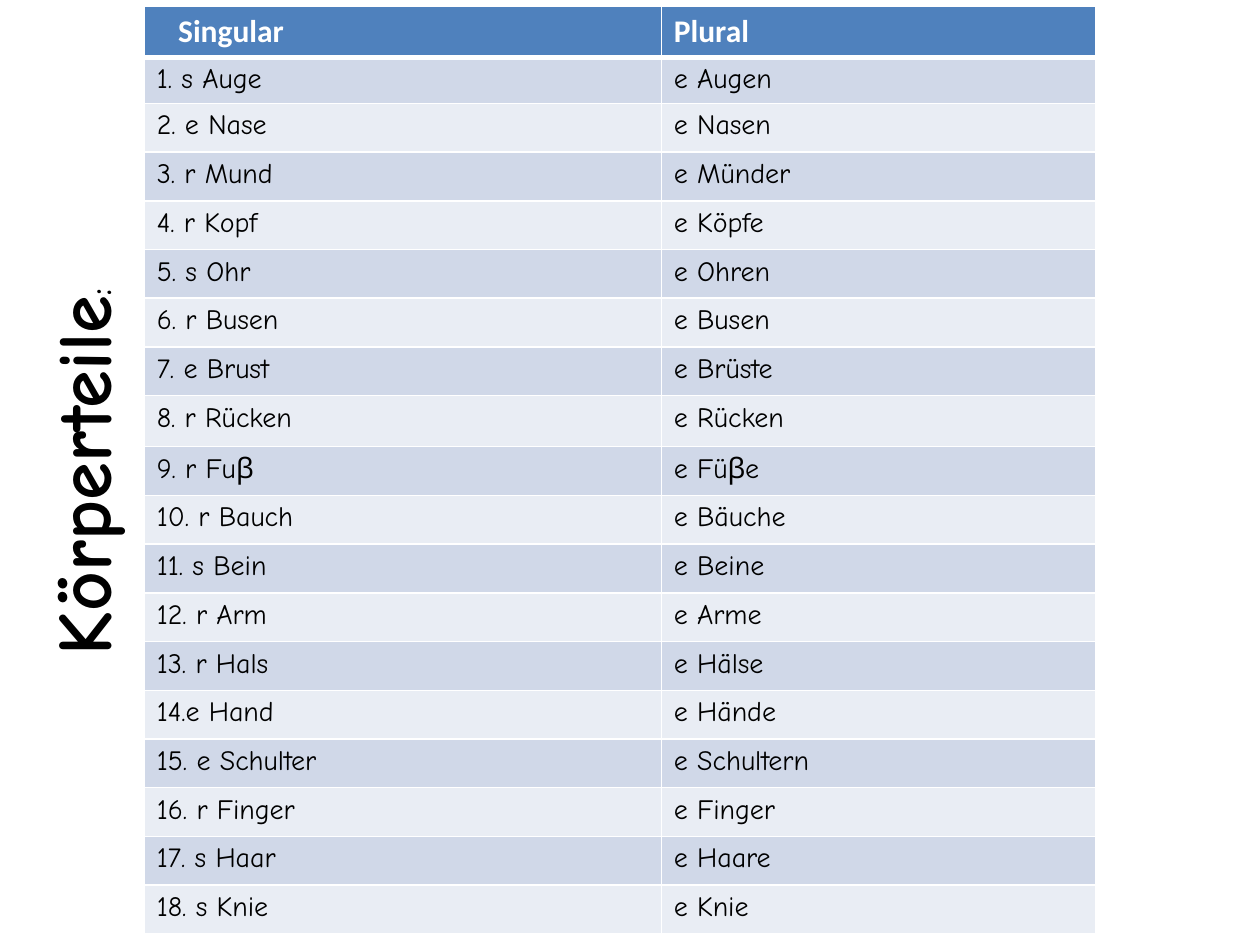
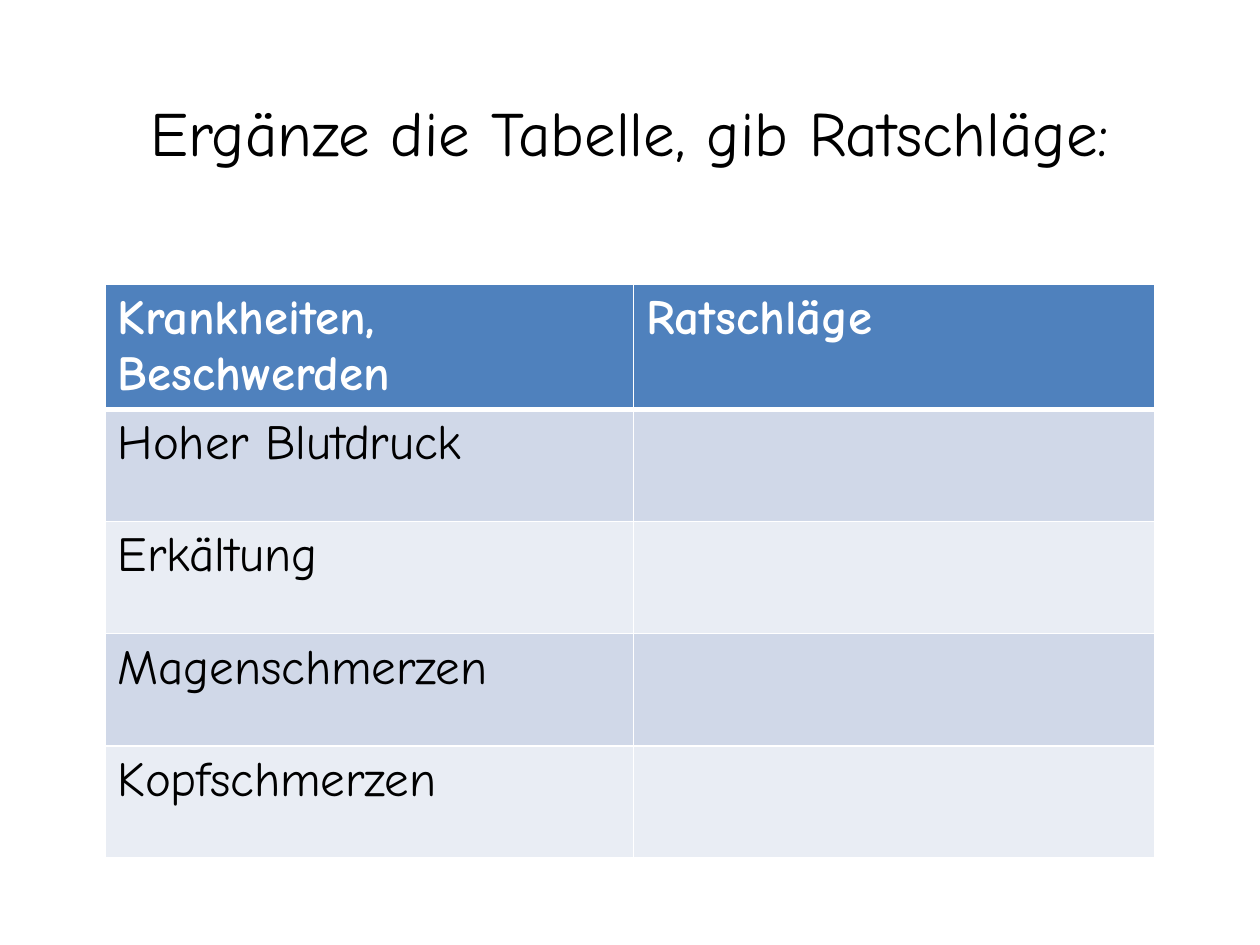
from dataclasses import dataclass

from lxml.etree import SubElement
from pptx import Presentation
from pptx.dml.color import RGBColor
from pptx.enum.text import MSO_ANCHOR, MSO_AUTO_SIZE, PP_ALIGN
from pptx.oxml.ns import qn
from pptx.util import Pt


@dataclass(frozen=True)
class Theme:
    text: str = "000000"
    white: str = "FFFFFF"
    header: str = "4F81BD"
    bands: tuple = ("D0D8E8", "E9EDF4")
    font: str = "Comic Neue"
    header_font: str = "Calibri"
    side_title: int = 44
    title: int = 36
    exercise: int = 28
    word_header: int = 18
    word: int = 16
    rule: int = 1
    header_rule: int = 3


THEME = Theme()

BODY_PARTS = [
    ("1. s Auge", "e Augen"),
    ("2. e Nase", "e Nasen"),
    ("3. r Mund", "e Münder"),
    ("4. r Kopf", "e Köpfe"),
    ("5. s Ohr", "e Ohren"),
    ("6. r Busen", "e Busen"),
    ("7. e Brust", "e Brüste"),
    ("8. r Rücken", "e Rücken"),
    ("9. r Fuβ", "e Füβe"),
    ("10. r Bauch", "e Bäuche"),
    ("11. s Bein", "e Beine"),
    ("12. r Arm", "e Arme"),
    ("13. r Hals", "e Hälse"),
    ("14.e Hand", "e Hände"),
    ("15. e Schulter", "e Schultern"),
    ("16. r Finger", "e Finger"),
    ("17. s Haar", "e Haare"),
    ("18. s Knie", "e Knie"),
]
COMPLAINTS = ["Hoher Blutdruck", "Erkältung", "Magenschmerzen", "Kopfschmerzen"]


class Deck:
    def __init__(self, theme):
        self.theme = theme
        self.prs = Presentation()
        self.prs.slide_width, self.prs.slide_height = Pt(720), Pt(540)
        self.s = None

    def add_slide(self):
        self.s = self.prs.slides.add_slide(self.prs.slide_layouts[5])

    def style(self, p, size, color, bold=False, font=None):
        p.font.name = font or self.theme.font
        p.font.size = Pt(size)
        p.font.bold = bold
        p.font.color.rgb = RGBColor.from_string(color)

    def title(self, runs, box, align=PP_ALIGN.CENTER, anchor=MSO_ANCHOR.MIDDLE,
              bold=False, rotation=0):
        sp = self.s.shapes.title
        sp.left, sp.top, sp.width, sp.height = map(Pt, box)
        sp.rotation = rotation
        tf = sp.text_frame
        tf.word_wrap = True
        tf.auto_size = MSO_AUTO_SIZE.NONE
        tf.vertical_anchor = anchor
        p = tf.paragraphs[0]
        p.alignment = align
        self.style(p, runs[0][1], self.theme.text, bold)
        for text, size in runs:
            r = p.add_run()
            r.text = text
            r.font.size = Pt(size)

    def borders(self, cell, top, bottom):
        tcPr = cell._tc.get_or_add_tcPr()
        widths = {"L": self.theme.rule, "R": self.theme.rule, "T": top, "B": bottom}
        for side, width in widths.items():
            ln = SubElement(tcPr, qn(f"a:ln{side}"), w=str(Pt(width)))
            fill = SubElement(ln, qn("a:solidFill"))
            SubElement(fill, qn("a:srgbClr"), val=self.theme.white)

    def table(self, rows, left, top, widths, heights, size, header_size, header_font=None):
        t = self.theme
        frame = self.s.shapes.add_table(len(rows), len(widths), Pt(left), Pt(top),
                                        Pt(sum(widths)), Pt(sum(heights)))
        table = frame.table
        for column, width in zip(table.columns, widths):
            column.width = Pt(width)
        for i, (row, height) in enumerate(zip(rows, heights)):
            table.rows[i].height = Pt(height)
            for j, text in enumerate(row):
                cell = table.cell(i, j)
                self.borders(cell, t.header_rule if i == 1 else t.rule,
                             t.header_rule if i == 0 else t.rule)
                cell.fill.solid()
                color = t.header if i == 0 else t.bands[(i - 1) % 2]
                cell.fill.fore_color.rgb = RGBColor.from_string(color)
                p = cell.text_frame.paragraphs[0]
                if i == 0:
                    self.style(p, header_size, t.white, True, header_font)
                else:
                    self.style(p, size, t.text)
                if text:
                    p.add_run().text = text
        return table


def body_parts_slide(deck):
    deck.add_slide()
    heights = [29, 26.3] + [27.84] * (len(BODY_PARTS) - 1)
    heights[8] = 29.2
    table = deck.table([("Singular", "Plural")] + BODY_PARTS, 82.4, 3.6, [295.5, 248.5],
                       heights, THEME.word, THEME.word_header, THEME.header_font)
    table.cell(0, 0).margin_left = Pt(19.4)
    deck.title([("Körperteile", THEME.side_title), (":", THEME.word_header)],
               (-228.2, 77, 548.6, 60.5), PP_ALIGN.LEFT, MSO_ANCHOR.TOP,
               bold=True, rotation=270)


def advice_slide(deck):
    deck.add_slide()
    deck.title([("Ergänze die Tabelle, gib Ratschläge:", THEME.title)],
               (36, 21.6, 648, 106.6))
    rows = [("Krankheiten, Beschwerden", "Ratschläge")] + [(c, "") for c in COMPLAINTS]
    deck.table(rows, 60, 162.3, [302, 298], [71] + [64.1] * len(COMPLAINTS),
               THEME.exercise, THEME.exercise)


def main():
    deck = Deck(THEME)
    body_parts_slide(deck)
    advice_slide(deck)
    deck.prs.save("out.pptx")


if __name__ == "__main__":
    main()
